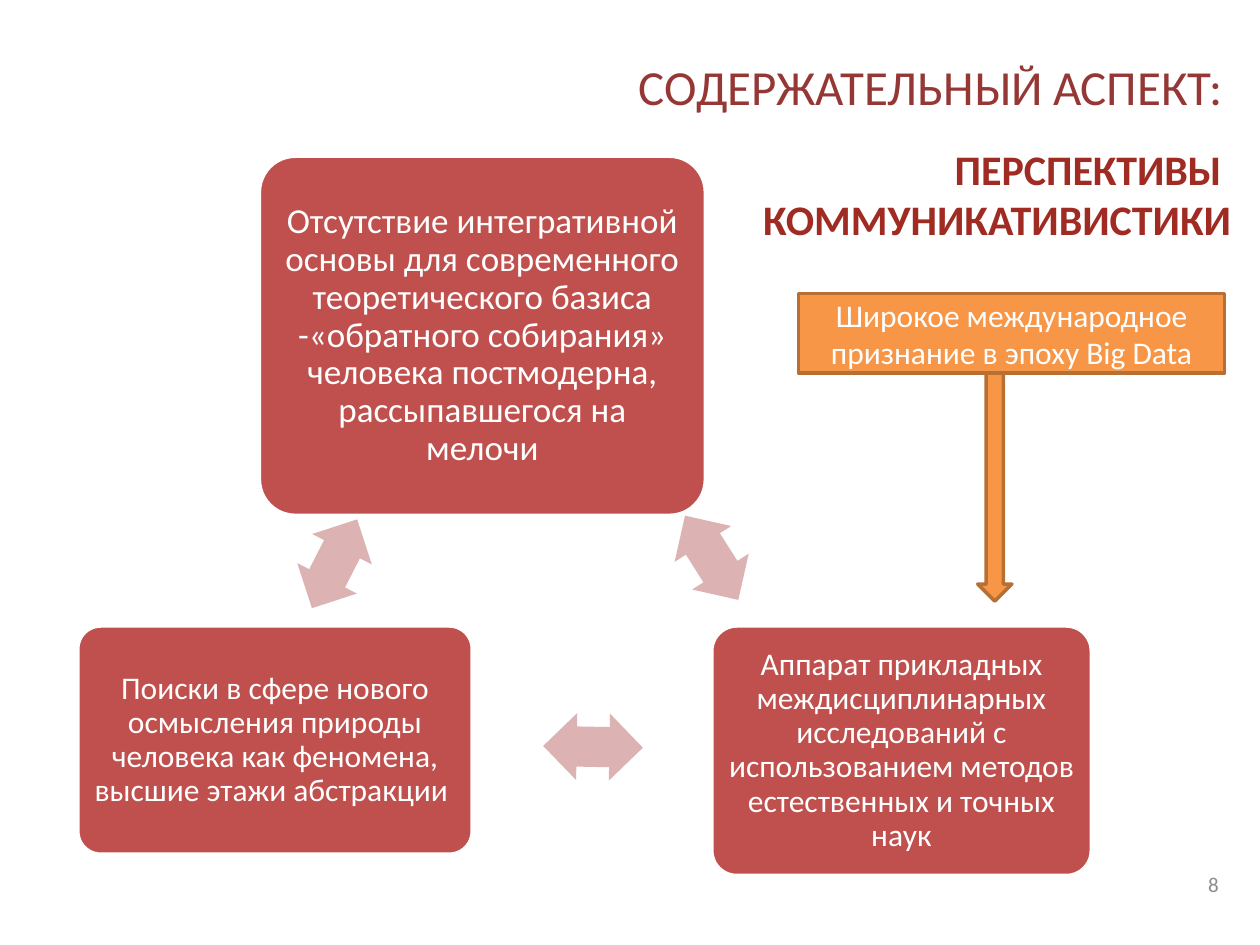
from pptx import Presentation
from pptx.dml.color import RGBColor
from pptx.enum.shapes import MSO_SHAPE
from pptx.enum.text import MSO_ANCHOR, PP_ALIGN
from pptx.util import Cm, Pt

FONT = "Calibri"
WHITE, RED, PINK = "FFFFFF", "C0504D", "DCB3B2"
ORANGE, BROWN = "F79646", "B76F34"

# text, (left, top, width, height) in cm, font size, inset in cm
TOPICS = [
    ("Отсутствие интегративной основы для современного теоретического базиса "
     "-«обратного собирания» человека постмодерна, рассыпавшегося на мелочи",
     (5.23, 3.15, 8.99, 7.24), 20, 0.21),
    ("Аппарат прикладных междисциплинарных исследований с использованием "
     "методов естественных и точных наук",
     (14.35, 12.62, 7.65, 5.03), 18, 0.18),
    ("Поиски в сфере нового осмысления природы человека как феномена, "
     "высшие этажи абстракции ",
     (1.57, 12.62, 7.95, 4.6), 18, 0.18),
]
# left, top in cm, rotation in degrees
LINKS = [(13.34, 10.57, 57.7), (10.95, 14.38, 181), (5.74, 10.69, 297)]


def rgb(color):
    return RGBColor.from_string(color)


def write(tf, text, size, color, align, anchor=MSO_ANCHOR.MIDDLE, bold=False):
    tf.text = text
    tf.vertical_anchor = anchor
    for p in tf.paragraphs:
        p.alignment = align
        for r in p.runs:
            r.font.name = FONT
            r.font.size = Pt(size)
            r.font.bold = bold
            r.font.color.rgb = rgb(color)


def add_shape(slide, kind, box, fill, line=None):
    sp = slide.shapes.add_shape(kind, *map(Cm, box))
    sp.shadow.inherit = False
    sp.fill.solid()
    sp.fill.fore_color.rgb = rgb(fill)
    if line:
        sp.line.color.rgb = rgb(line)
        sp.line.width = Pt(2)
    else:
        sp.line.fill.background()
    return sp


def add_topic(slide, text, box, size, inset):
    sp = add_shape(slide, MSO_SHAPE.ROUNDED_RECTANGLE, box, RED, WHITE)
    sp.adjustments[0] = 0.1
    tf = sp.text_frame
    tf.margin_left = tf.margin_right = Cm(inset)
    tf.margin_top = tf.margin_bottom = Cm(inset)
    write(tf, text, size, WHITE, PP_ALIGN.CENTER)
    tf.paragraphs[0].line_spacing = 0.9


def add_link(slide, left, top, angle):
    sp = add_shape(slide, MSO_SHAPE.LEFT_RIGHT_ARROW, (left, top, 2.01, 1.35), PINK)
    sp.adjustments[0] = 0.6
    sp.adjustments[1] = 0.5
    sp.rotation = angle


def add_label(slide, text, box, size, color, anchor, bold=False):
    tf = slide.shapes.add_textbox(*map(Cm, box)).text_frame
    tf.word_wrap = False
    write(tf, text, size, color, PP_ALIGN.RIGHT, anchor, bold)


def add_title(slide, text, box):
    title = slide.shapes.title
    title.left, title.top, title.width, title.height = map(Cm, box)
    write(title.text_frame, text, 28, "953735", PP_ALIGN.RIGHT)


def main():
    prs = Presentation()
    prs.slide_width, prs.slide_height = Cm(25.4), Cm(19.05)
    slide = prs.slides.add_slide(prs.slide_layouts[5])

    add_title(slide, "СОДЕРЖАТЕЛЬНЫЙ АСПЕКТ:", (1.7, 0.76, 23.19, 1.96))
    add_label(slide, "8", (18.9, 17.32, 5.92, 1.02), 12, "8C8C8C", MSO_ANCHOR.MIDDLE)
    add_label(slide, "ПЕРСПЕКТИВЫ \nКОММУНИКАТИВИСТИКИ", (15.04, 2.77, 10.03, 2.31),
              24, "9F2B22", MSO_ANCHOR.TOP, bold=True)

    for topic in TOPICS:
        add_topic(slide, *topic)
    for link in LINKS:
        add_link(slide, *link)

    banner = add_shape(slide, MSO_SHAPE.RECTANGLE, (16.1, 5.92, 8.59, 1.6), ORANGE, BROWN)
    write(banner.text_frame, "Широкое международное признание в эпоху Big Data",
          18, WHITE, PP_ALIGN.CENTER)
    add_shape(slide, MSO_SHAPE.DOWN_ARROW, (19.71, 7.52, 0.69, 4.6), ORANGE, BROWN)

    prs.save("out.pptx")


if __name__ == "__main__":
    main()
